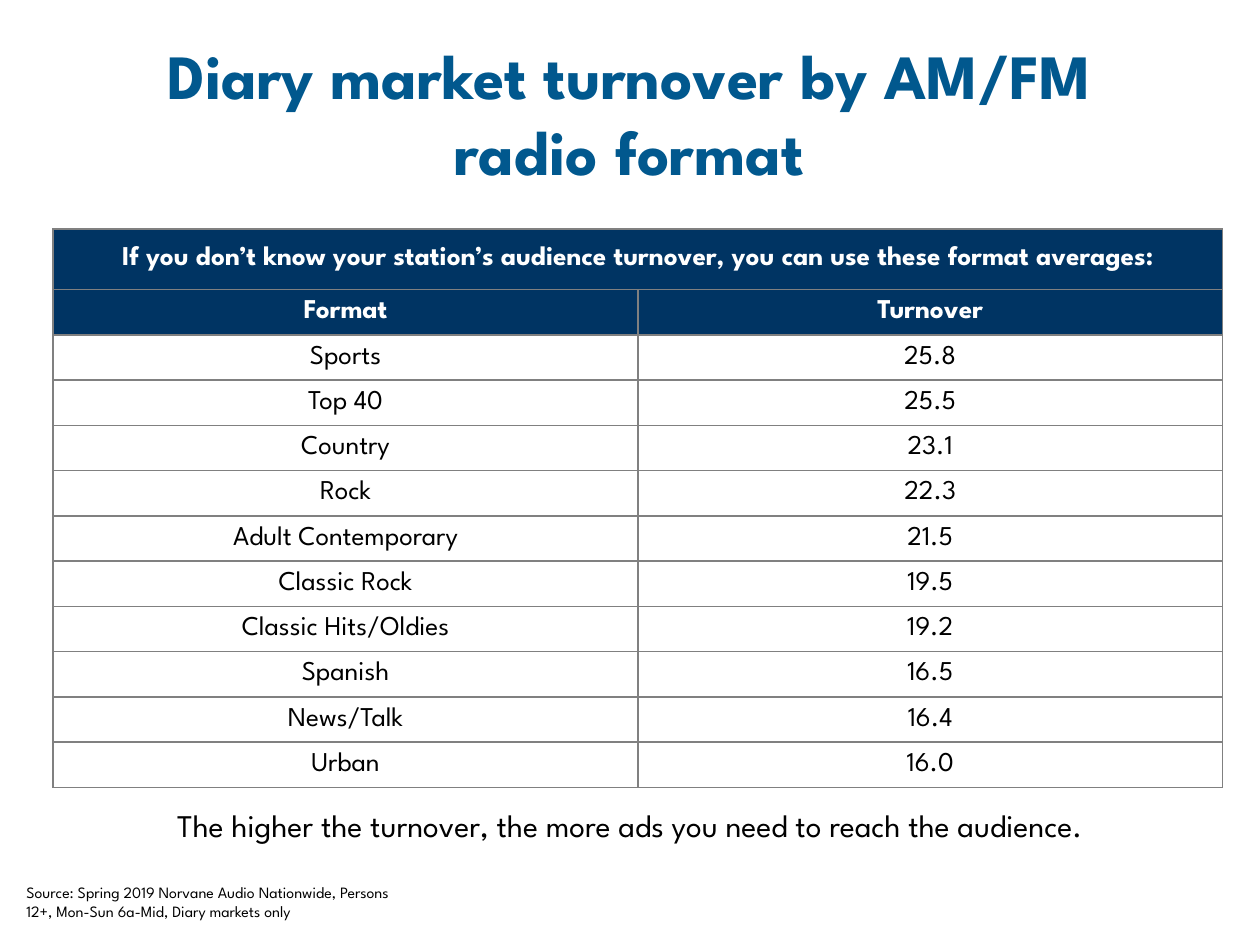
from lxml.etree import SubElement
from pptx import Presentation
from pptx.dml.color import RGBColor
from pptx.enum.text import MSO_ANCHOR, MSO_AUTO_SIZE, PP_ALIGN
from pptx.oxml.ns import qn
from pptx.util import Pt

FONT = "League Spartan"
TITLE_BLUE = RGBColor(0x01, 0x58, 0x8E)
NAVY = RGBColor(0x00, 0x34, 0x63)
WHITE = RGBColor(0xFF, 0xFF, 0xFF)
BLACK = RGBColor(0x00, 0x00, 0x00)
GRAY = RGBColor(0x80, 0x80, 0x80)

BANNER = ("If you don’t know your station’s audience turnover, "
          "you can use these format averages:")
HEADINGS = ("Format", "Turnover")
TURNOVER = [
    ("Sports", "25.8"),
    ("Top 40", "25.5"),
    ("Country", "23.1"),
    ("Rock", "22.3"),
    ("Adult Contemporary", "21.5"),
    ("Classic Rock", "19.5"),
    ("Classic Hits/Oldies", "19.2"),
    ("Spanish", "16.5"),
    ("News/Talk", "16.4"),
    ("Urban", "16.0"),
]
BANNER_HEIGHT = 34.6


def set_all(target, values):
    for name, value in values.items():
        setattr(target, name, value)


def write(frame, text, size, color, bold=False, align=PP_ALIGN.CENTER):
    para = frame.paragraphs[0]
    para.alignment = align
    span = para.add_run()
    span.text = text
    set_all(span.font, {"name": FONT, "size": Pt(size), "bold": bold})
    span.font.color.rgb = color


def add_title(page, box, text):
    title = page.shapes.title
    set_all(title, dict(zip(("left", "top", "width", "height"), map(Pt, box))))
    set_all(title.text_frame, {"word_wrap": True, "auto_size": MSO_AUTO_SIZE.NONE,
                               "vertical_anchor": MSO_ANCHOR.TOP})
    write(title.text_frame, text, 36, TITLE_BLUE, bold=True)


def add_note(page, box, text, size, align):
    frame = page.shapes.add_textbox(*map(Pt, box)).text_frame
    frame.word_wrap = True
    write(frame, text, size, BLACK, align=align)


def add_borders(cell):
    """Draw a 1 pt gray line on each side; call before the cell is filled."""
    properties = cell._tc.get_or_add_tcPr()
    for side in ("a:lnL", "a:lnR", "a:lnT", "a:lnB"):
        line = SubElement(properties, qn(side), w=str(Pt(1)))
        fill = SubElement(line, qn("a:solidFill"))
        SubElement(fill, qn("a:srgbClr"), val=str(GRAY))


def add_turnover_table(page, box):
    rows = [(BANNER, ""), HEADINGS, *TURNOVER]
    table = page.shapes.add_table(len(rows), len(HEADINGS), *map(Pt, box)).table
    set_all(table, {"first_row": False, "horz_banding": False})
    row_height = (box[3] - BANNER_HEIGHT) / (len(rows) - 1)
    for number, texts in enumerate(rows):
        table.rows[number].height = Pt(row_height if number else BANNER_HEIGHT)
        is_heading = number < 2
        for column, text in enumerate(texts):
            cell = table.cell(number, column)
            add_borders(cell)
            cell.fill.solid()
            cell.fill.fore_color.rgb = NAVY if is_heading else WHITE
            set_all(cell, {"vertical_anchor": MSO_ANCHOR.MIDDLE,
                           "margin_top": Pt(2), "margin_bottom": Pt(2)})
            if text:
                write(cell.text_frame, text, 15.5,
                      WHITE if is_heading else BLACK, bold=is_heading)
    table.cell(0, 0).merge(table.cell(0, 1))


def main():
    deck = Presentation()
    set_all(deck, {"slide_width": Pt(720), "slide_height": Pt(540)})
    page = deck.slides.add_slide(deck.slide_layouts[5])
    add_title(page, (80, 17.3, 559.4, 94.3),
              "Diary market turnover by AM/FM radio format")
    add_turnover_table(page, (30.4, 131, 668.2, 319))
    add_note(page, (8, 501, 234.7, 29),
             "Source: Spring 2019 Norvane Audio Nationwide, Persons 12+, "
             "Mon-Sun 6a-Mid, Diary markets only", 9, PP_ALIGN.LEFT)
    add_note(page, (25.2, 457.2, 669.6, 29),
             "The higher the turnover, the more ads you need to reach the audience.",
             18, PP_ALIGN.CENTER)
    deck.save("out.pptx")


if __name__ == "__main__":
    main()
